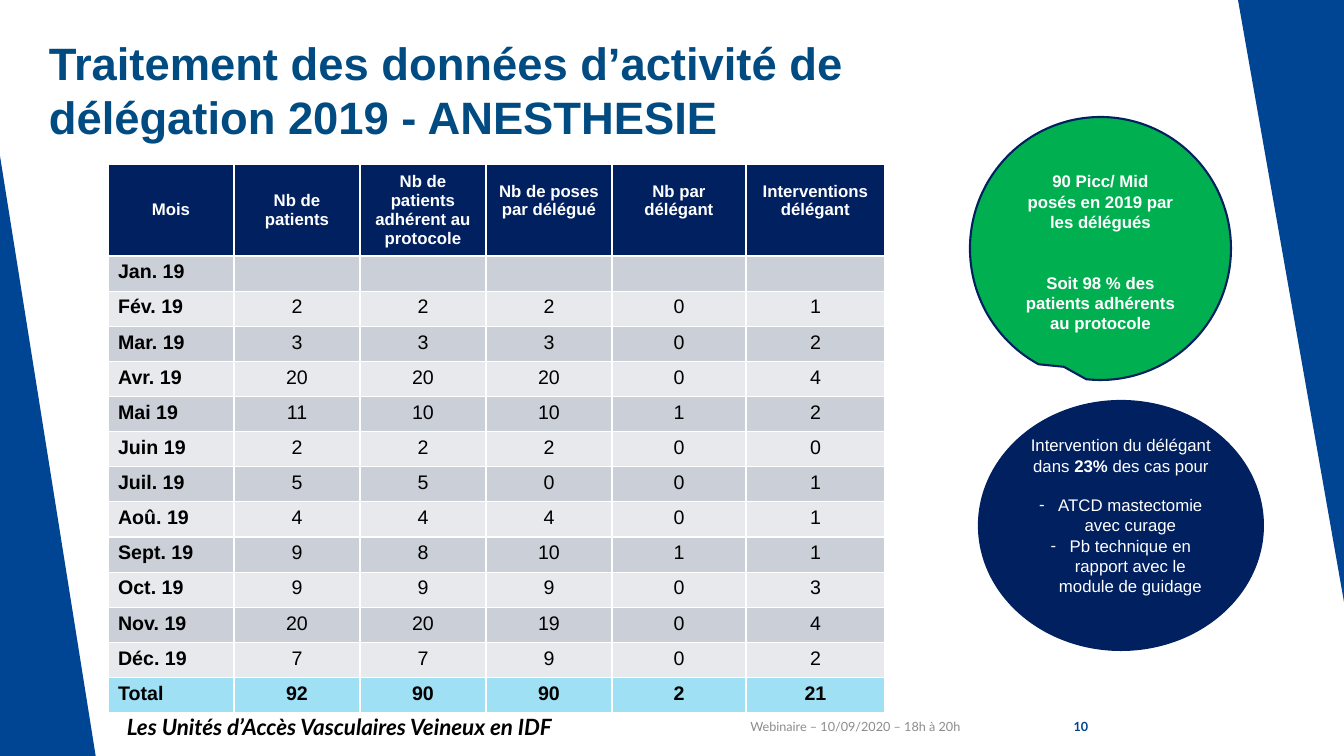
"""Build the slide on the 2019 anaesthesia delegation activity."""
from lxml import etree
from pptx import Presentation
from pptx.dml.color import RGBColor
from pptx.enum.shapes import MSO_SHAPE
from pptx.enum.text import MSO_ANCHOR, PP_ALIGN
from pptx.oxml.ns import qn
from pptx.util import Pt

SLIDE_W, SLIDE_H = 1344, 756
SCALE = 12192000 / SLIDE_W

WHITE = RGBColor(0xFF, 0xFF, 0xFF)
BLACK = RGBColor(0x00, 0x00, 0x00)
BLUE = RGBColor(0x00, 0x44, 0x94)
TITLE_BLUE = RGBColor(0x00, 0x4B, 0x82)
NAVY = RGBColor(0x00, 0x20, 0x60)
GREEN = RGBColor(0x00, 0xB0, 0x50)
GREY = RGBColor(0x8C, 0x8C, 0x8C)
TOTAL_BLUE = RGBColor(0x9F, 0xE0, 0xF5)
BANDS = (RGBColor(0xCB, 0xD0, 0xD8), RGBColor(0xE7, 0xE9, 0xED))

TITLE = dict(name="Arial", size=Pt(32.4), bold=True, color=TITLE_BLUE)
HEADER = dict(name="Arial", size=Pt(12), bold=True, color=WHITE)
MONTH = dict(name="Arial", size=Pt(14), bold=True, color=BLACK)
COUNT = {**MONTH, "bold": False}
NOTE = {**HEADER, "bold": False}
EVENT = dict(name="Lato", size=Pt(9), color=GREY)
PAGE = {**EVENT, "bold": True, "color": BLUE}
SERIES = dict(name="Lato", size=Pt(16), bold=True, italic=True, color=BLACK)

COLUMN_WIDTHS = (126, 126, 126, 126, 134, 139)
TABLE_H, HEADER_H = 549, 92
HEADINGS = ("Mois", "Nb de patients", "Nb de patients adhérent au protocole",
            "Nb de poses par délégué", "Nb par délégant",
            "Interventions délégant")
ACTIVITY = (
    ("Jan. 19", "", "", "", "", ""),
    ("Fév. 19", 2, 2, 2, 0, 1),
    ("Mar. 19", 3, 3, 3, 0, 2),
    ("Avr. 19", 20, 20, 20, 0, 4),
    ("Mai 19", 11, 10, 10, 1, 2),
    ("Juin 19", 2, 2, 2, 0, 0),
    ("Juil. 19", 5, 5, 0, 0, 1),
    ("Aoû. 19", 4, 4, 4, 0, 1),
    ("Sept. 19", 9, 8, 10, 1, 1),
    ("Oct. 19", 9, 9, 9, 0, 3),
    ("Nov. 19", 20, 20, 19, 0, 4),
    ("Déc. 19", 7, 7, 9, 0, 2),
    ("Total", 92, 90, 90, 2, 21),
)


def px(length):
    """Turn a length in px into EMU."""
    return round(length * SCALE)


def style_font(font, values):
    """Apply a dict of format values to a font."""
    for key, value in values.items():
        if key == "color":
            font.color.rgb = value
        else:
            setattr(font, key, value)


def write(paragraph, runs, values, align=PP_ALIGN.LEFT):
    """Write (text, overrides) runs into a paragraph."""
    paragraph.alignment = align
    for text, overrides in runs:
        run = paragraph.add_run()
        run.text = text
        style_font(run.font, {**values, **overrides})


def add_label(slide, box, text, values, align=PP_ALIGN.LEFT,
              anchor=MSO_ANCHOR.MIDDLE):
    """Add a wrapped text box with one paragraph."""
    frame = slide.shapes.add_textbox(*map(px, box)).text_frame
    frame.word_wrap = True
    frame.vertical_anchor = anchor
    write(frame.paragraphs[0], [(text, {})], values, align)


def add_figure(slide, preset, box, fill, outline=None):
    """Add a flat preset shape."""
    figure = slide.shapes.add_shape(preset, *map(px, box))
    figure.shadow.inherit = False
    figure.fill.solid()
    figure.fill.fore_color.rgb = fill
    if outline is None:
        figure.line.fill.background()
    else:
        figure.line.color.rgb = outline
        figure.line.width = Pt(1.5)
    return figure


def add_dash(paragraph):
    """Give a paragraph a hanging dash bullet."""
    properties = paragraph._p.get_or_add_pPr()
    properties.set("marL", str(px(19)))
    properties.set("indent", str(-px(19)))
    etree.SubElement(properties, qn("a:buFont")).set("typeface", "Arial")
    etree.SubElement(properties, qn("a:buChar")).set("char", "-")


def fill_bubble(bubble, paragraphs, values, margins):
    """Write centred (runs, space before, dashed) paragraphs in a bubble."""
    frame = bubble.text_frame
    frame.word_wrap = True
    frame.vertical_anchor = MSO_ANCHOR.MIDDLE
    frame.margin_top, frame.margin_bottom = map(px, margins)
    for index, (runs, gap, dashed) in enumerate(paragraphs):
        paragraph = frame.add_paragraph() if index else frame.paragraphs[0]
        if gap:
            paragraph.space_before = Pt(gap)
        if dashed:
            add_dash(paragraph)
        write(paragraph, runs, values, PP_ALIGN.CENTER)


def fill_row(row, values, fill, first_style, other_style):
    """Fill one table row, with its own style for the first cell."""
    for column, (cell, value) in enumerate(zip(row.cells, values)):
        cell.fill.solid()
        cell.fill.fore_color.rgb = fill
        style = other_style if column else first_style
        align = PP_ALIGN.CENTER if column else PP_ALIGN.LEFT
        paragraph = cell.text_frame.paragraphs[0]
        style_font(paragraph.font, style)
        write(paragraph, [(str(value), {})] if value != "" else [], style, align)


def add_activity_table(slide):
    """Add the monthly activity table."""
    table = slide.shapes.add_table(
        len(ACTIVITY) + 1, len(HEADINGS), px(108), px(164),
        px(sum(COLUMN_WIDTHS)), px(TABLE_H)).table
    for column, width in zip(table.columns, COLUMN_WIDTHS):
        column.width = px(width)
    heading_row, *activity_rows = table.rows
    heading_row.height = px(HEADER_H)
    fill_row(heading_row, HEADINGS, NAVY, HEADER, HEADER)
    for column, cell in enumerate(heading_row.cells):
        cell.vertical_anchor = MSO_ANCHOR.MIDDLE
        cell.text_frame.paragraphs[0].alignment = PP_ALIGN.CENTER
        if column > 2:
            cell.margin_bottom = px(24)
    for index, (row, values) in enumerate(zip(activity_rows, ACTIVITY)):
        row.height = px((TABLE_H - HEADER_H) / len(ACTIVITY))
        is_total = values[0] == "Total"
        fill_row(row, values, TOTAL_BLUE if is_total else BANDS[index % 2],
                 MONTH, MONTH if is_total else COUNT)


def main():
    """Build and save the slide."""
    deck = Presentation()
    deck.slide_width, deck.slide_height = px(SLIDE_W), px(SLIDE_H)
    slide = deck.slides.add_slide(deck.slide_layouts[6])

    add_figure(slide, MSO_SHAPE.RIGHT_TRIANGLE, (0, 156, 96, 602), BLUE)
    right_wedge = add_figure(slide, MSO_SHAPE.RIGHT_TRIANGLE,
                             (1238, 0, 106, 602), BLUE)
    right_wedge.rotation = 180

    add_label(slide, (708, 707, 262, 40), "Webinaire – 10/09/2020 – 18h à 20h",
              EVENT, PP_ALIGN.RIGHT)
    add_label(slide, (117, 707, 539, 40),
              "Les Unités d’Accès Vasculaires Veineux en IDF", SERIES)
    add_label(slide, (1022, 707, 76, 40), "10", PAGE, PP_ALIGN.RIGHT)
    add_activity_table(slide)
    add_label(slide, (39, 30, 948, 110),
              "Traitement des données d’activité de délégation 2019 - ANESTHESIE",
              TITLE, anchor=MSO_ANCHOR.TOP)

    result = add_figure(slide, MSO_SHAPE.OVAL_CALLOUT, (970, 117, 261, 263),
                        GREEN, NAVY)
    result.adjustments[0], result.adjustments[1] = -0.14, 0.45
    fill_bubble(result, [
        ([("90 Picc/ Mid", {})], 0, False),
        ([("posés en 2019 par les délégués", {})], 0, False),
        ([("Soit 98 % des patients adhérents au protocole", {})], 29, False),
    ], HEADER, (12, 5))

    causes = add_figure(slide, MSO_SHAPE.OVAL, (979, 401, 284, 249), NAVY, NAVY)
    fill_bubble(causes, [
        ([("Intervention du délégant dans ", {}), ("23%", {"bold": True}),
          (" des cas pour", {})], 0, False),
        ([("ATCD mastectomie avec curage", {})], 14, True),
        ([("Pb technique en rapport avec le module de guidage", {})], 0, True),
    ], NOTE, (5, 25))

    deck.save("out.pptx")


if __name__ == "__main__":
    main()
